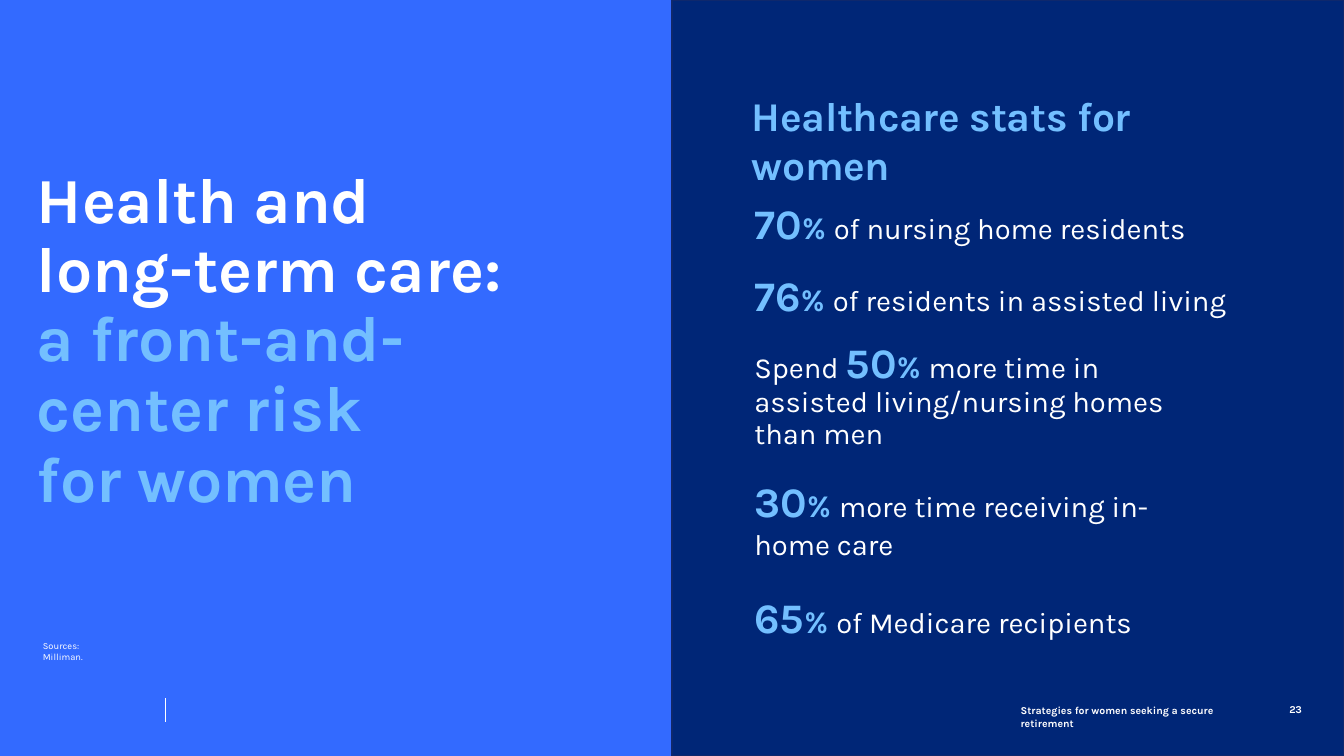
from pptx import Presentation
from pptx.dml.color import RGBColor
from pptx.enum import shapes, text
from pptx.util import Inches, Pt

HUES = {"blue": "336AFF", "navy": "002677", "edge": "0F286C",
        "sky": "73BFFF", "white": "FFFFFF"}

deck = Presentation()
deck.slide_width, deck.slide_height = Inches(16), Inches(9)
col, row = deck.slide_width / 16, deck.slide_height / 9
slide = deck.slides.add_slide(deck.slide_layouts[1])
title, body = slide.placeholders


def frame(box, x, y, w, h, inset):
    """Place a text box and return its cleared frame."""
    box.left, box.top = int(x * col), int(y * row)
    box.width, box.height = int(w * col), int(h * row)
    area = box.text_frame
    area.word_wrap = True
    area.auto_size = text.MSO_AUTO_SIZE.NONE
    area.vertical_anchor = text.MSO_ANCHOR.TOP
    area.margin_left = area.margin_right = area.margin_bottom = 0
    area.margin_top = Inches(inset)
    return area


def style(run, size, hue, bold=False, gap=0):
    """Format one run; gap is letter spacing in points."""
    run.font.name, run.font.size, run.font.bold = "Karla", Pt(size), bold
    run.font.color.rgb = RGBColor.from_string(HUES[hue])
    if gap:
        run._r.get_or_add_rPr().set("spc", str(round(gap * 100)))


# Two half-slide panels
for side, hue in enumerate(("blue", "navy")):
    panel = slide.shapes.add_shape(
        shapes.MSO_SHAPE.RECTANGLE, int(side * 8 * col), 0,
        int(8 * col), int(9 * row))
    panel.shadow.inherit = False
    panel.fill.solid()
    panel.fill.fore_color.rgb = RGBColor.from_string(HUES[hue])
    if hue == "navy":
        panel.line.color.rgb = RGBColor.from_string(HUES["edge"])
        panel.line.width = Pt(1)
    else:
        panel.line.fill.background()
    # Panels sit behind the placeholders
    slide.shapes._spTree.insert(2 + side, panel._element)

# Footer rule
rule = slide.shapes.add_connector(
    shapes.MSO_CONNECTOR.STRAIGHT, int(1.97 * col), int(8.31 * row),
    int(1.97 * col), int(8.59 * row))
rule.line.color.rgb = RGBColor.from_string(HUES["white"])
rule.line.width = Pt(0.5)
props = rule._element.spPr
props.append(props.makeelement(
    "{http://schemas.openxmlformats.org/drawingml/2006/main}effectLst", {}))

# Title
area = frame(title, 0.44, 1.89, 5.58, 4.25, 0.11)
lines = [(0.9, [("Health and long-term care: ", "white"),
                ("a front-and- center risk", "sky")]),
         (Pt(60), [("for women", "sky")])]
for i, (pitch, parts) in enumerate(lines):
    para = area.add_paragraph() if i else area.paragraphs[0]
    para.alignment = text.PP_ALIGN.LEFT
    para.line_spacing, para.space_before = pitch, 0
    for words, hue in parts:
        run = para.add_run()
        run.text = words
        style(run, 55, hue, True, -0.1)

# Statistics: lead, figure, rest, space before, line pitch, right margin
stats = [("", "70", "of nursing home residents", 0, 1, 0),
         ("", "76", "of residents in assisted living", 18.5, 1, 0),
         ("Spend ", "50", "more time in assisted living/nursing homes than men",
          19.1, 0.9, 0.9),
         ("", "30", "more time receiving in-home care", 21.6, 1, 0.9),
         ("", "65", "of Medicare recipients", 26.4, 1, 0)]
area = frame(body, 8.98, 2.08, 6.24, 4.79, 0.27)
for i, (lead, figure, rest, before, pitch, edge) in enumerate(stats):
    para = area.add_paragraph() if i else area.paragraphs[0]
    para.line_spacing, para.space_before = pitch, Pt(before)
    form = para._p.get_or_add_pPr()
    for key, size in (("marL", 0), ("marR", edge), ("indent", 0)):
        form.set(key, str(Inches(size)))
    form.append(form.makeelement(
        "{http://schemas.openxmlformats.org/drawingml/2006/main}buNone", {}))
    for words, size, hue in ((lead, 25, "white"), (figure, 36, "sky"),
                             ("% ", 27, "sky"), (rest, 25, "white")):
        if words:
            run = para.add_run()
            run.text = words
            style(run, size, hue, hue == "sky")

# Heading, sources, footer and page number
notes = [("Healthcare stats for women", 8.95, 1.06, 6.13, 0.61, 35, "sky", True, -0.3),
         ("Sources: Milliman.", 0.51, 7.6, 0.91, 0.16, 8, "white", False, 0),
         ("Strategies for women seeking a secure retirement",
          12.15, 8.36, 2.95, 0.19, 9, "white", True, 0),
         ("23", 15.35, 8.35, 0.2, 0.19, 9, "white", True, -0.2)]
for words, x, y, w, h, size, hue, bold, gap in notes:
    area = frame(slide.shapes.add_textbox(0, 0, 0, 0), x, y, w, h, 0.02)
    area.text = words
    style(area.paragraphs[0].runs[0], size, hue, bold, gap)

deck.save("out.pptx")
